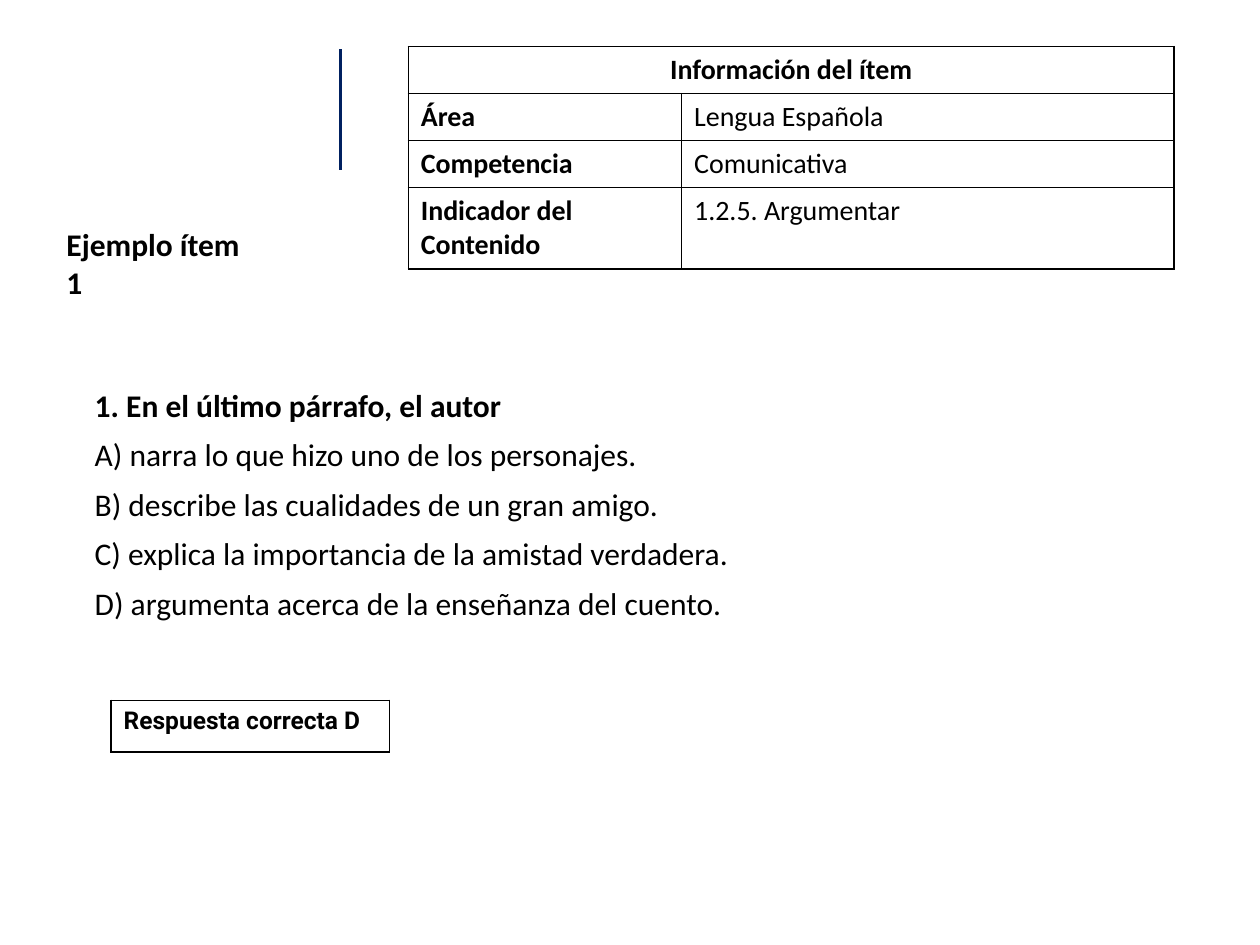
"""Build a slide that shows a sample test item with its data table and answer."""
from lxml import etree
from pptx import Presentation
from pptx.dml.color import RGBColor
from pptx.enum.shapes import MSO_CONNECTOR
from pptx.enum.text import MSO_AUTO_SIZE, PP_ALIGN
from pptx.oxml import parse_xml
from pptx.oxml.ns import nsdecls, qn
from pptx.util import Cm, Pt

BLACK = RGBColor(0x00, 0x00, 0x00)
NAVY = RGBColor(0x00, 0x20, 0x60)
STRAIGHT = MSO_CONNECTOR.STRAIGHT
CENTER = PP_ALIGN.CENTER
GROW = MSO_AUTO_SIZE.SHAPE_TO_FIT_TEXT

INFO = [
    ("Información del ítem", ""),
    ("Área", "Lengua Española"),
    ("Competencia", "Comunicativa"),
    ("Indicador del Contenido", "1.2.5. Argumentar"),
]
ITEM = [
    "1. En el último párrafo, el autor",
    "A) narra lo que hizo uno de los personajes.",
    "B) describe las cualidades de un gran amigo.",
    "C) explica la importancia de la amistad verdadera.",
    "D) argumenta acerca de la enseñanza del cuento.",
]


def style(para, size, bold, face="Calibri"):
    for run in para.runs:
        font = run.font
        font.name, font.size, font.bold = face, Pt(size), bold
        font.color.rgb = BLACK


def border(cell):
    props = cell._tc.get_or_add_tcPr()
    for side in "LRTB":
        props.append(parse_xml(
            f'<a:ln{side} {nsdecls("a")} w="{Pt(1)}"><a:solidFill>'
            f'<a:srgbClr val="{BLACK}"/></a:solidFill></a:ln{side}>'))


def add_grid(slide, left, top, cols, rows, data, size, face="Calibri"):
    frame = slide.shapes.add_table(
        len(rows), len(cols), Cm(left), Cm(top), Cm(sum(cols)), Cm(sum(rows)))
    table = frame.table
    table.first_row = table.horz_banding = False
    for col, width in zip(table.columns, cols):
        col.width = Cm(width)
    for row, height, texts in zip(table.rows, rows, data):
        row.height = Cm(height)
        for pos, (cell, text) in enumerate(zip(row.cells, texts)):
            border(cell)
            cell.fill.background()
            if text:
                cell.text_frame.text = text
                style(cell.text_frame.paragraphs[0], size, pos == 0, face)
    return table


def add_text(slide, left, top, width, height, lines, gap=0):
    box = slide.shapes.add_textbox(Cm(left), Cm(top), Cm(width), Cm(height))
    frame = box.text_frame
    frame.word_wrap = True
    frame.text = "\n".join(lines)
    for pos, para in enumerate(frame.paragraphs):
        para.space_before = Pt(gap if pos else 0)
        style(para, 18, pos == 0)
    return frame


def add_rule(slide, x, top, end):
    line = slide.shapes.add_connector(STRAIGHT, Cm(x), Cm(top), Cm(x), Cm(end))
    line.line.color.rgb = NAVY
    line.line.width = Pt(2)
    etree.SubElement(line._element.spPr, qn("a:effectLst"))


def main():
    deck = Presentation()
    deck.slide_width, deck.slide_height = Cm(25.4), Cm(19.05)
    slide = deck.slides.add_slide(deck.slide_layouts[6])

    add_rule(slide, 6.86, 0.99, 3.43)
    info = add_grid(slide, 8.23, 0.94, [5.51, 9.93],
                    [0.94, 0.94, 0.94, 1.65], INFO, 16)
    info.cell(0, 0).merge(info.cell(0, 1))
    info.cell(0, 0).text_frame.paragraphs[0].alignment = CENTER

    item = add_text(slide, 1.78, 7.65, 20.73, 5.4, ITEM, 6.7)
    item.margin_left = item.margin_right = Cm(0.13)
    add_grid(slide, 2.24, 14.12, [5.61], [1.04],
             [("Respuesta correcta D",)], 14, "Roboto")
    title = add_text(slide, 1.09, 4.42, 4.32, 1.02, ["Ejemplo ítem 1"])
    title.auto_size = GROW

    deck.save("out.pptx")


if __name__ == "__main__":
    main()
